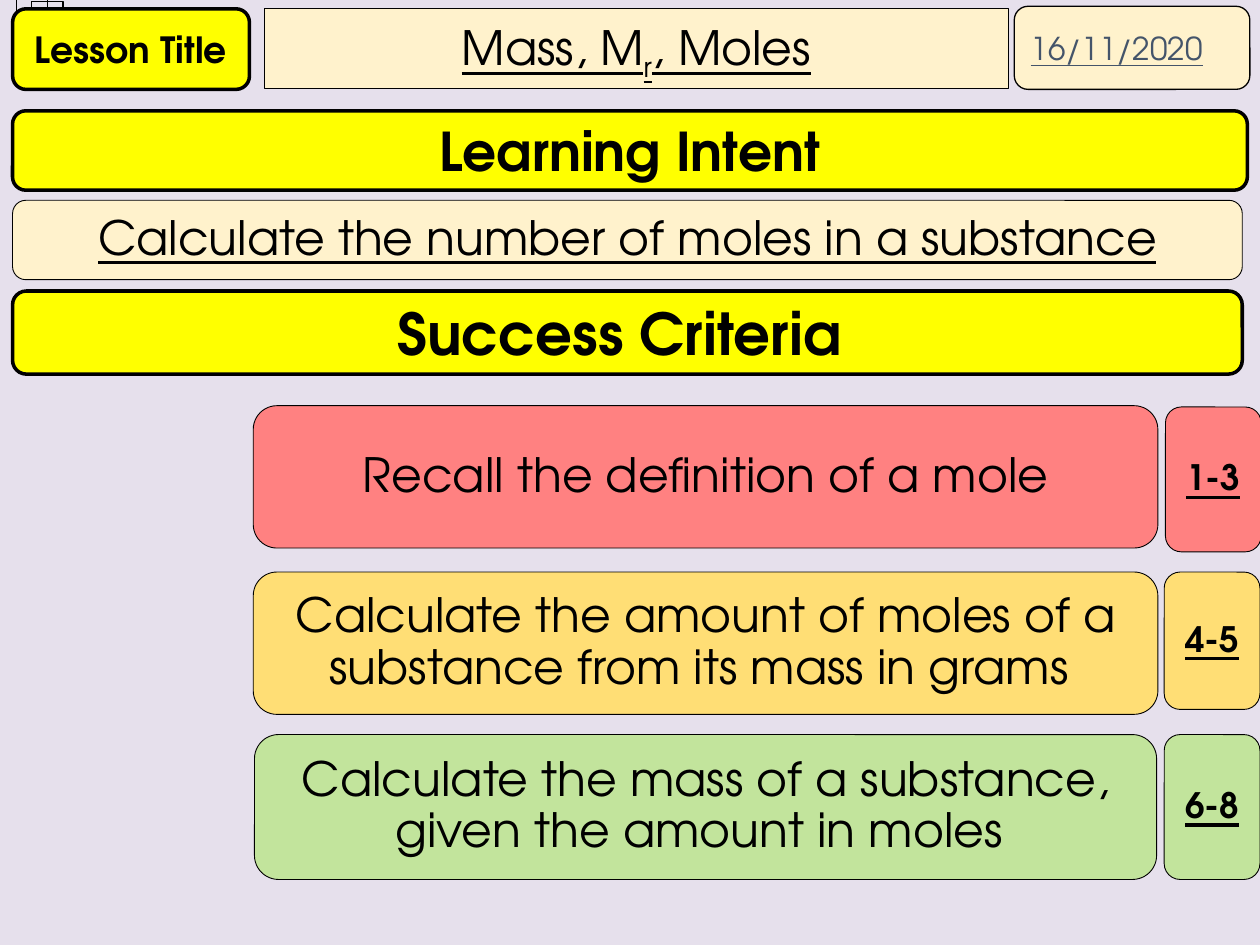
from lxml import etree
from pptx import Presentation
from pptx import util as u
from pptx.dml.color import RGBColor
from pptx.enum import shapes, text
from pptx.oxml.ns import qn

FONT = "TeX Gyre Adventor"
BLACK, YELLOW, CREAM = "000000", "FFFF00", "FFF2CC"
CRITERIA = [
    ("Recall the definition of a mole", "1-3", "FF8181",
     (2.01, 3.22, 7.18, 1.13), (9.25, 3.23, 0.76, 1.15)),
    ("Calculate the amount of moles of a substance from its mass in grams ", "4-5", "FFDE75",
     (2.01, 4.54, 7.18, 1.13), (9.24, 4.54, 0.76, 1.09)),
    ("Calculate the mass of a substance, given the amount in moles ", "6-8", "C2E49C",
     (2.02, 5.83, 7.16, 1.15), (9.24, 5.83, 0.76, 1.15)),
]


def rgb(value):
    """Turn a hex string into a colour."""
    return RGBColor.from_string(value)


def outline(box, fill=None, width=0.5):
    """Give a box its fill and black border."""
    if fill:
        box.fill.solid()
        box.fill.fore_color.rgb = rgb(fill)
    else:
        box.fill.background()
    box.line.color.rgb = rgb(BLACK)
    box.line.width = u.Pt(width)
    box.shadow.inherit = False


def write(box, *parts, size=27, color=BLACK, bold=False, underline=False,
          align=text.PP_ALIGN.CENTER, spacing=0.9, before=10, insets=(0.1, 0.05)):
    """Write one paragraph; a part given as a tuple is (text, baseline)."""
    frame = box.text_frame
    frame.word_wrap = True
    frame.auto_size = text.MSO_AUTO_SIZE.NONE
    frame.vertical_anchor = text.MSO_ANCHOR.MIDDLE
    frame.margin_left = frame.margin_right = u.Inches(insets[0])
    frame.margin_top = frame.margin_bottom = u.Inches(insets[1])
    line = frame.paragraphs[0]
    line.alignment = align
    line.line_spacing = spacing
    line.space_before = u.Pt(before)
    for part in parts:
        words, baseline = part if isinstance(part, tuple) else (part, 0)
        run = line.add_run()
        run.text = words
        font = run.font
        font.name, font.size = FONT, u.Pt(size)
        font.bold, font.underline = bold, underline
        font.color.rgb = rgb(color)
        if baseline:
            run._r.get_or_add_rPr().set("baseline", str(baseline * 1000))


def panel(slide, place, fill=None, width=0.5,
          kind=shapes.MSO_SHAPE.ROUNDED_RECTANGLE):
    """Add a bordered panel."""
    box = slide.shapes.add_shape(kind, *map(u.Inches, place))
    outline(box, fill, width)
    return box


def heading(slide, place, words, size):
    """Add a yellow heading panel."""
    write(panel(slide, place, YELLOW, 2), words, size=size, bold=True,
          spacing=1.0, before=0, insets=(0.07, 0.04))


def lesson_title(slide, place, *parts):
    """Shape the title placeholder as a rounded panel."""
    title = slide.shapes.title
    title.left, title.top, title.width, title.height = map(u.Inches, place)
    rounded = etree.SubElement(title._element.spPr, qn("a:prstGeom"), prst="roundRect")
    etree.SubElement(rounded, qn("a:avLst"))
    outline(title, CREAM)
    write(title, *parts, underline=True)


def main():
    """Build the lesson slide."""
    deck = Presentation()
    deck.slide_width, deck.slide_height = u.Inches(10), u.Inches(7.5)
    slide = deck.slides.add_slide(deck.slide_layouts[5])
    slide.background.fill.solid()
    slide.background.fill.fore_color.rgb = rgb("E6E0EC")

    for corner in ((0.13, -0.16), (0.25, 0.01)):
        panel(slide, (*corner, 0.25, 0.33), width=0.75, kind=shapes.MSO_SHAPE.RECTANGLE)

    heading(slide, (0.1, 0.07, 1.88, 0.64), "Lesson Title", 20.6)
    heading(slide, (0.1, 0.88, 9.8, 0.63), "Learning Intent", 30.5)
    heading(slide, (0.1, 2.31, 9.76, 0.66), "Success Criteria ", 33)

    lesson_title(slide, (2.1, 0.07, 5.9, 0.63), "Mass, M", ("r", -25), ", Moles")
    write(panel(slide, (8.05, 0.05, 1.87, 0.66), CREAM, 0.75), "16/11/2020",
          size=18, color="44546A", underline=True, align=text.PP_ALIGN.LEFT,
          spacing=1.0, before=0)
    write(panel(slide, (0.1, 1.59, 9.76, 0.63), CREAM),
          "Calculate the number of moles in a substance", underline=True)

    for criterion, grade, fill, criterion_place, grade_place in CRITERIA:
        write(panel(slide, criterion_place, fill), criterion)
        write(panel(slide, grade_place, fill), grade, size=20, bold=True, underline=True)

    deck.save("out.pptx")


if __name__ == "__main__":
    main()
